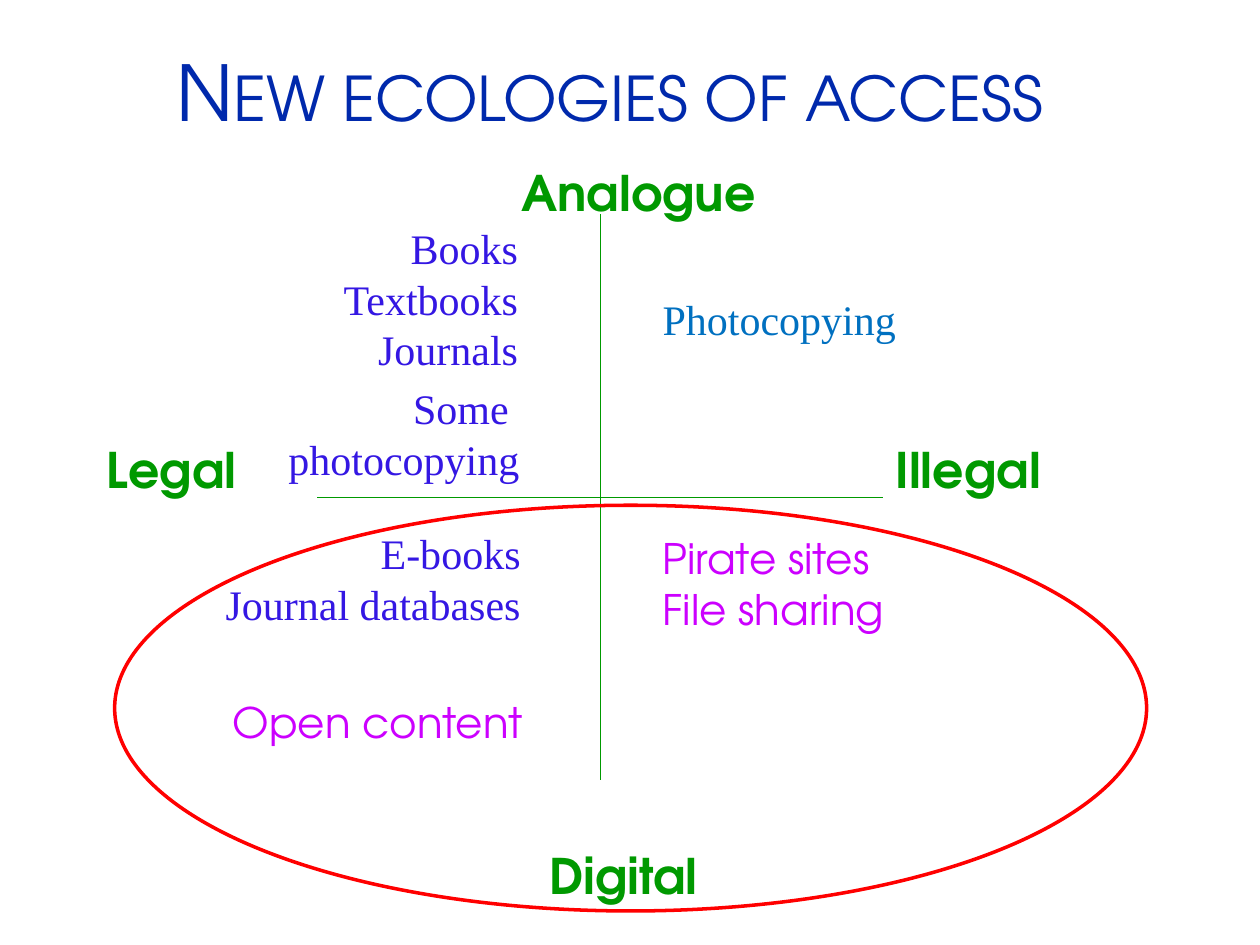
from dataclasses import dataclass

from pptx import Presentation
from pptx import util as u
from pptx.dml.color import RGBColor
from pptx.enum import shapes, text
from pptx.oxml import parse_xml
from pptx.oxml.ns import nsdecls

GREEN = RGBColor(0x00, 0x99, 0x00)
INDIGO = RGBColor(0x34, 0x17, 0xE3)
BLUE = RGBColor(0x00, 0x70, 0xC0)
MAGENTA = RGBColor(0xCC, 0x00, 0xFF)
NAVY = RGBColor(0x00, 0x29, 0xAC)
RED = RGBColor(0xFF, 0x00, 0x00)
SANS = "TeX Gyre Adventor"
SERIF = "Times New Roman"

SLIDE_WIDTH, SLIDE_HEIGHT = u.Inches(10), u.Inches(7.5)
COLUMNS = 100
CELL = SLIDE_WIDTH / COLUMNS
CENTRE_COLUMN, CENTRE_ROW, AXIS_REACH = 47.64, 39.46, 22.45
LEFT, CENTRE, RIGHT = text.PP_ALIGN.LEFT, text.PP_ALIGN.CENTER, text.PP_ALIGN.RIGHT


@dataclass(frozen=True)
class Area:
    column: float
    row: float
    columns: float
    rows: float

    def lengths(self) -> list[u.Emu]:
        return [cells(n) for n in (self.column, self.row, self.columns, self.rows)]


@dataclass(frozen=True)
class Label:
    words: str
    area: Area
    color: RGBColor
    font: str = SANS
    size: int = 24
    bold: bool = False
    align: text.PP_ALIGN = LEFT
    wrap: bool = True


def cells(count: float) -> u.Emu:
    return u.Emu(round(count * CELL))


def pole(words: str, area: Area) -> Label:
    return Label(words, area, GREEN, size=28, bold=True, wrap=False)


LABELS = [
    pole("Legal", Area(7.5, 34.4, 12.4, 5.7)),
    pole("Digital", Area(42.6, 66.6, 14, 5.7)),
    pole("Analogue", Area(40.4, 12.4, 20.8, 5.7)),
    pole("Illegal", Area(70.1, 34.4, 13.7, 5.7)),
    Label("Books\nTextbooks\nJournals", Area(25.3, 17.2, 16.8, 13.1), INDIGO, SERIF, align=RIGHT),
    Label("Some \vphotocopying", Area(11.8, 29.9, 30.4, 9.1), INDIGO, SERIF, align=RIGHT),
    Label("E-books\nJournal databases", Area(11.8, 41.4, 30.5, 9.1), INDIGO, SERIF, align=RIGHT),
    Label("Open content", Area(3.5, 54.8, 39, 5), MAGENTA, align=RIGHT),
    Label("Photocopying", Area(51.6, 22.8, 22.8, 5), BLUE, SERIF),
    Label("Pirate sites\nFile sharing", Area(51.6, 41.8, 22.8, 9.1), MAGENTA),
]
TITLE = Label("New ecologies of access", Area(5.9, 2.9, 85, 8.6), NAVY, size=44, align=CENTRE)
DIGITAL_REGION = Area(9.1, 40.1, 81.9, 32.2)


def write_label(shape, label: Label) -> None:
    frame = shape.text_frame
    frame.word_wrap = label.wrap
    frame.text = label.words
    for paragraph in frame.paragraphs:
        paragraph.alignment = label.align
        font = paragraph.font
        font.name, font.size, font.bold = label.font, u.Pt(label.size), label.bold
        font.color.rgb = label.color


def add_title(slide, label: Label) -> None:
    title = slide.shapes.title
    title.left, title.top, title.width, title.height = label.area.lengths()
    write_label(title, label)
    title.text_frame.auto_size = text.MSO_AUTO_SIZE.NONE
    paragraph = title.text_frame.paragraphs[0]
    paragraph._p.get_or_add_pPr().get_or_add_defRPr().set("cap", "small")
    paragraph.runs[0].font._rPr.set("cap", "small")


def add_label(slide, label: Label) -> None:
    box = slide.shapes.add_textbox(*label.area.lengths())
    write_label(box, label)
    box.text_frame.auto_size = text.MSO_AUTO_SIZE.SHAPE_TO_FIT_TEXT


def add_axis(slide, across: float, down: float) -> None:
    axis = slide.shapes.add_connector(
        shapes.MSO_CONNECTOR.STRAIGHT,
        cells(CENTRE_COLUMN - across), cells(CENTRE_ROW - down),
        cells(CENTRE_COLUMN + across), cells(CENTRE_ROW + down),
    )
    axis.line.color.rgb = GREEN
    axis.line.width = u.Pt(0.75)
    axis._element.spPr.append(parse_xml(f"<a:effectLst {nsdecls('a')}/>"))


def add_ring(slide, area: Area) -> None:
    ring = slide.shapes.add_shape(shapes.MSO_SHAPE.OVAL, *area.lengths())
    ring.shadow.inherit = False
    ring.fill.background()
    ring.line.color.rgb = RED
    ring.line.width = u.Pt(2)


def main() -> None:
    presentation = Presentation()
    presentation.slide_width, presentation.slide_height = SLIDE_WIDTH, SLIDE_HEIGHT
    slide = presentation.slides.add_slide(presentation.slide_layouts.get_by_name("Title Only"))
    add_title(slide, TITLE)
    add_axis(slide, 0, AXIS_REACH)
    add_axis(slide, AXIS_REACH, 0)
    for label in LABELS:
        add_label(slide, label)
    add_ring(slide, DIGITAL_REGION)
    presentation.save("out.pptx")


if __name__ == "__main__":
    main()
